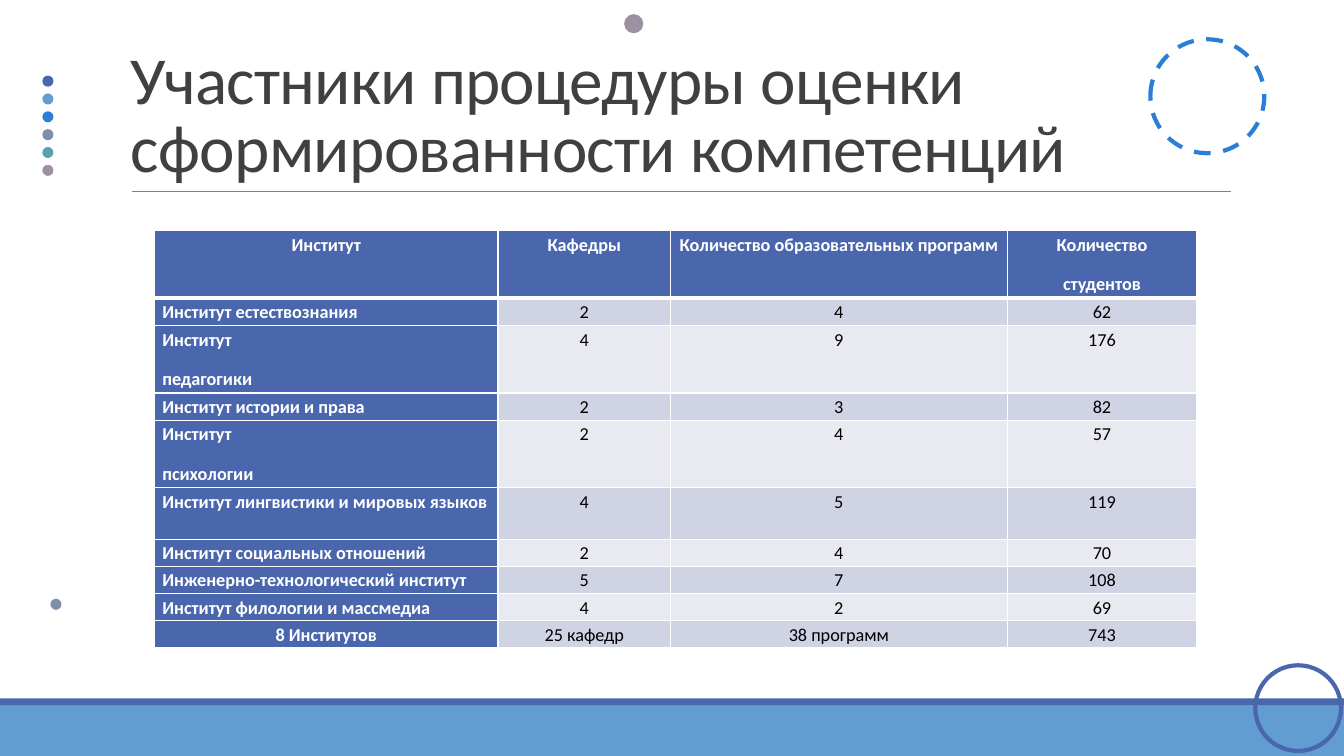
"""Build the slide on who took part in the competence assessment."""
from lxml.etree import SubElement
from pptx import Presentation
from pptx.dml.color import RGBColor
from pptx.enum.dml import MSO_LINE
from pptx.enum.shapes import MSO_CONNECTOR, MSO_SHAPE
from pptx.enum.text import MSO_ANCHOR, PP_ALIGN
from pptx.oxml.ns import qn
from pptx.util import Inches, Pt

TITLE = "Участники процедуры оценки сформированности компетенций"
ROWS = [
    ("Институт", "Кафедры", "Количество образовательных программ", "Количество\nстудентов"),
    ("Институт естествознания", "2", "4", "62"),
    ("Институт\nпедагогики", "4", "9", "176"),
    ("Институт истории и права", "2", "3", "82"),
    ("Институт\nпсихологии", "2", "4", "57"),
    ("Институт лингвистики и мировых языков", "4", "5", "119"),
    ("Институт социальных отношений", "2", "4", "70"),
    ("Инженерно-технологический институт", "5", "7", "108"),
    ("Институт филологии и массмедиа", "4", "2", "69"),
    ("8 Институтов", "25 кафедр", "38 программ", "743"),
]
WIDTHS = [3.41, 1.71, 3.34, 1.88]
HEIGHTS = [0.67, 0.27, 0.67, 0.27, 0.67, 0.51, 0.27, 0.27, 0.27, 0.27]

FONT = "Calibri"
WHITE = RGBColor(0xFF, 0xFF, 0xFF)
BLACK = RGBColor(0, 0, 0)
DARK = RGBColor(0x40, 0x40, 0x40)
GREY = RGBColor(0x80, 0x80, 0x80)
INDIGO = RGBColor(0x4A, 0x66, 0xAC)
SKY = RGBColor(0x62, 0x9D, 0xD1)
AZURE = RGBColor(0x29, 0x7F, 0xD5)
SLATE = RGBColor(0x7F, 0x8F, 0xA9)
TEAL = RGBColor(0x5A, 0xA2, 0xAE)
MAUVE = RGBColor(0x9D, 0x90, 0xA0)
BAND = RGBColor(0xD0, 0xD3, 0xE3)
PALE = RGBColor(0xE9, 0xEA, 0xF1)

DOTS = [INDIGO, SKY, AZURE, SLATE, TEAL, MAUVE]
DOT_TOP, DOT_STEP, DOT_SIZE = 0.75, 0.177, 0.11


def add_form(slide, kind, box, fill=None, line=None):
    """Add a flat shape with a fill, an outline, or both."""
    form = slide.shapes.add_shape(kind, *map(Inches, box))
    form.shadow.inherit = False
    if fill is None:
        form.fill.background()
    else:
        form.fill.solid()
        form.fill.fore_color.rgb = fill
    if line is None:
        form.line.fill.background()
    else:
        form.line.color.rgb = line
        form.line.width = Pt(3)
    return form


def add_decor(slide):
    """Add the footer bars, title rule, dots and rings."""
    add_form(slide, MSO_SHAPE.RECTANGLE, (0, 7, 13.33, 0.5), SKY)
    add_form(slide, MSO_SHAPE.RECTANGLE, (0, 6.93, 13.33, 0.07), INDIGO)
    rule = slide.shapes.add_connector(
        MSO_CONNECTOR.STRAIGHT, Inches(1.31), Inches(1.9), Inches(12.21), Inches(1.9))
    rule.line.color.rgb = GREY
    rule.line.width = Pt(0.5)
    SubElement(rule._element.spPr, qn("a:effectLst"))
    spots = [(0.42, DOT_TOP + i * DOT_STEP, DOT_SIZE, color) for i, color in enumerate(DOTS)]
    spots += [(6.19, 0.14, 0.19, MAUVE), (0.5, 5.94, DOT_SIZE, SLATE)]
    for left, top, size, color in spots:
        add_form(slide, MSO_SHAPE.OVAL, (left, top, size, size), color)
    ring = add_form(slide, MSO_SHAPE.OVAL, (11.41, 0.39, 1.13, 1.13), line=AZURE)
    ring.line.dash_style = MSO_LINE.DASH
    add_form(slide, MSO_SHAPE.OVAL, (12.45, 6.6, 0.85, 0.85), line=INDIGO)


def style_run(run, size, color, bold=False):
    """Set the font of a run."""
    run.font.name = FONT
    run.font.size = Pt(size)
    run.font.bold = bold
    run.font.color.rgb = color


def add_title(slide):
    """Add the slide title."""
    box = slide.shapes.add_textbox(Inches(1.2), Inches(0.31), Inches(11), Inches(1.59))
    frame = box.text_frame
    frame.word_wrap = True
    frame.vertical_anchor = MSO_ANCHOR.BOTTOM
    frame.text = TITLE
    para = frame.paragraphs[0]
    para.line_spacing = 0.85
    run = para.runs[0]
    style_run(run, 48, DARK)
    run.font._element.set("spc", "-50")


def add_edges(cell, row):
    """Draw white cell borders, thick below the header row."""
    props = cell._tc.get_or_add_tcPr()
    thick = {(0, "lnB"), (1, "lnT")}
    for side in ("lnL", "lnR", "lnT", "lnB"):
        width = Pt(3) if (row, side) in thick else Pt(1)
        edge = SubElement(props, qn("a:" + side), w=str(width))
        fill = SubElement(edge, qn("a:solidFill"))
        SubElement(fill, qn("a:srgbClr"), val=str(WHITE))


def fill_cell(cell, text, row, col):
    """Write and format one table cell."""
    head = row == 0 or col == 0
    left = col == 0 and 0 < row < len(ROWS) - 1
    add_edges(cell, row)
    cell.fill.solid()
    cell.fill.fore_color.rgb = INDIGO if head else BAND if row % 2 else PALE
    cell.margin_left = cell.margin_right = Inches(0.08)
    cell.margin_top = cell.margin_bottom = 0
    cell.text_frame.text = text
    for para in cell.text_frame.paragraphs:
        para.alignment = PP_ALIGN.LEFT if left else PP_ALIGN.CENTER
        para.line_spacing = 1.15
        para.space_after = Pt(10)
        style_run(para.runs[0], 13, WHITE if head else BLACK, head)


def add_grid(slide):
    """Add the table of institutes."""
    frame = slide.shapes.add_table(
        len(ROWS), len(WIDTHS), Inches(1.53), Inches(2.29),
        Inches(sum(WIDTHS)), Inches(sum(HEIGHTS)))
    table = frame.table
    for col, width in enumerate(WIDTHS):
        table.columns[col].width = Inches(width)
    for row, texts in enumerate(ROWS):
        table.rows[row].height = Inches(HEIGHTS[row])
        for col, text in enumerate(texts):
            fill_cell(table.cell(row, col), text, row, col)


def main():
    """Build and save the deck."""
    deck = Presentation()
    deck.slide_width, deck.slide_height = Inches(13.33), Inches(7.5)
    slide = deck.slides.add_slide(deck.slide_layouts[6])
    add_decor(slide)
    add_title(slide)
    add_grid(slide)
    deck.save("out.pptx")


if __name__ == "__main__":
    main()
